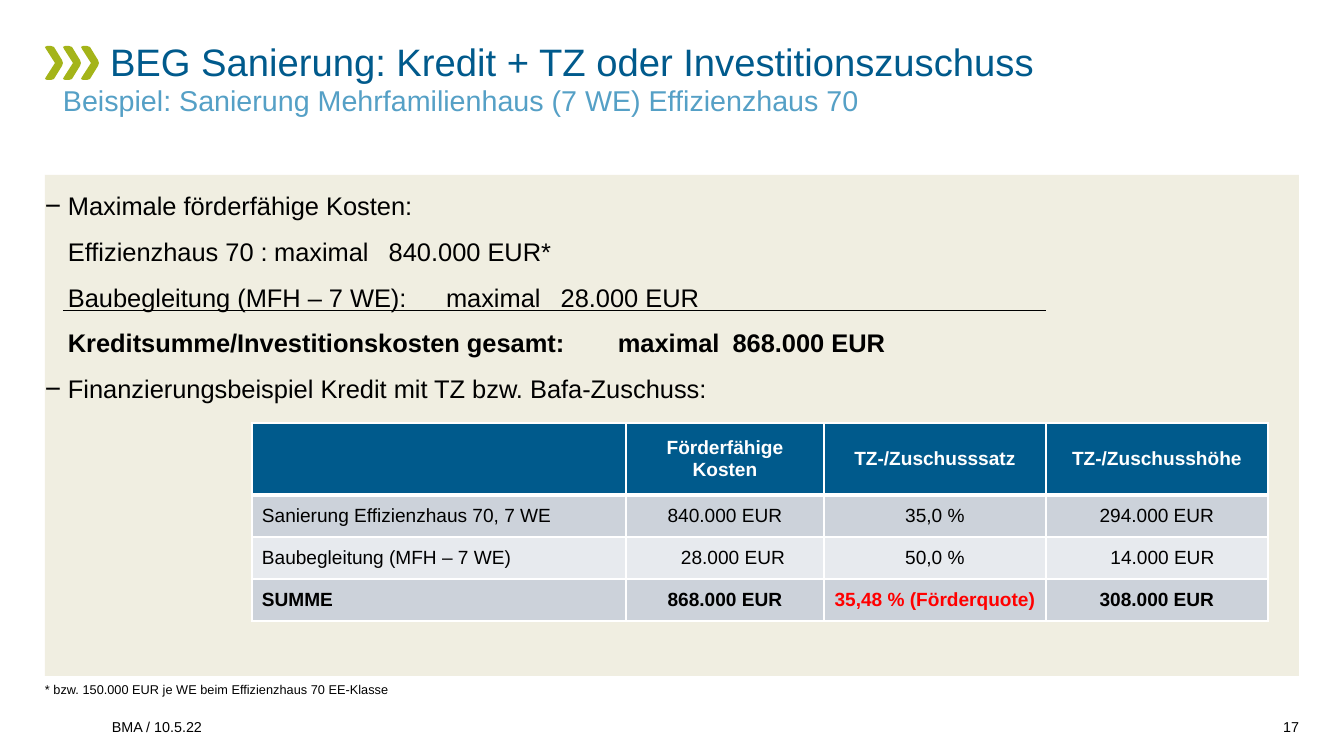
"""Build the slide on the BEG renovation loan and grant example."""
from lxml.etree import SubElement
from pptx import Presentation
from pptx.dml.color import RGBColor
from pptx.enum.shapes import MSO_CONNECTOR, MSO_SHAPE
from pptx.enum.text import MSO_ANCHOR, PP_ALIGN
from pptx.oxml.ns import qn
from pptx.util import Pt

SCALE = 7979
BLACK, WHITE, RED = "000000", "FFFFFF", "FF0000"
BLUE, LIGHT_BLUE, GREEN, BEIGE = "005A8C", "55A0C6", "A4B419", "F0EEE1"
BAND_DARK, BAND_LIGHT = "CCD2DA", "E7EAEE"


def color(hex_string):
    return RGBColor.from_string(hex_string)


def style(paragraph, size, hex_string, bold=False, align=PP_ALIGN.LEFT):
    paragraph.alignment = align
    paragraph.font.name = "Arial"
    paragraph.font.size = Pt(size)
    paragraph.font.bold = bold
    paragraph.font.color.rgb = color(hex_string)


presentation = Presentation()
presentation.slide_width = 1344 * SCALE
presentation.slide_height = 756 * SCALE
slide = presentation.slides.add_slide(presentation.slide_layouts[6])

chevron_points = [(2, 0), (6, 0), (9, 1), (17, 14), (18, 17), (17, 20), (9, 33), (6, 34),
                  (2, 34), (0, 33), (1, 31), (10, 17), (1, 3), (0, 1)]
for left in (45, 63, 81):
    points = [(left + x, 46 + y) for x, y in chevron_points]
    builder = slide.shapes.build_freeform(*points[0], scale=SCALE)
    builder.add_line_segments(points[1:], close=True)
    chevron = builder.convert_to_shape()
    chevron.shadow.inherit = False
    chevron.fill.solid()
    chevron.fill.fore_color.rgb = color(GREEN)
    chevron.line.fill.background()

panel = slide.shapes.add_shape(MSO_SHAPE.RECTANGLE, 45 * SCALE, 175 * SCALE, 1254 * SCALE, 501 * SCALE)
panel.shadow.inherit = False
panel.fill.solid()
panel.fill.fore_color.rgb = color(BEIGE)
panel.line.fill.background()
frame = panel.text_frame
frame.word_wrap = True
frame.vertical_anchor = MSO_ANCHOR.TOP
frame.margin_left = frame.margin_top = frame.margin_right = frame.margin_bottom = 0

panel_lines = [
    ("Maximale förderfähige Kosten:", False, 0),
    ("Effizienzhaus 70 :\tmaximal\t840.000 EUR*", False, 843),
    ("Baubegleitung (MFH – 7 WE):\tmaximal\t28.000 EUR", False, 833),
    ("Kreditsumme/Investitionskosten gesamt:\tmaximal\t868.000 EUR", True, 833),
    ("Finanzierungsbeispiel Kredit mit TZ bzw. Bafa-Zuschuss:", False, 0),
]
for index, (text, bold, amount_end) in enumerate(panel_lines):
    paragraph = frame.add_paragraph() if index else frame.paragraphs[0]
    paragraph.text = text
    paragraph.line_spacing = Pt(28.75)
    properties = paragraph._p.get_or_add_pPr()
    if amount_end:
        properties.set("marL", "0")
        properties.set("indent", str(23 * SCALE))
        SubElement(properties, qn("a:buNone"))
        tabs = SubElement(properties, qn("a:tabLst"))
        for position, side in ((573, "l"), (amount_end, "r")):
            SubElement(tabs, qn("a:tab"), pos=str(position * SCALE), algn=side)
    else:
        properties.set("marL", str(23 * SCALE))
        properties.set("indent", str(-23 * SCALE))
        SubElement(properties, qn("a:buSzPct"), val="110000")
        SubElement(properties, qn("a:buFont"), typeface="Arial")
        SubElement(properties, qn("a:buChar"), char="−")
    style(paragraph, 16, BLACK, bold)

text_boxes = [
    ("BEG Sanierung: Kredit + TZ oder Investitionszuschuss",
     63, 42, 1236, 47, 24, BLUE, MSO_ANCHOR.TOP, PP_ALIGN.LEFT, 0.95, 47),
    ("Beispiel: Sanierung Mehrfamilienhaus (7 WE) Effizienzhaus 70",
     63, 85, 1236, 41, 18, LIGHT_BLUE, MSO_ANCHOR.TOP, PP_ALIGN.LEFT, 0.95, 0),
    ("* bzw. 150.000 EUR je WE beim Effizienzhaus 70 EE-Klasse",
     45, 678, 1254, 19, 8, BLACK, MSO_ANCHOR.BOTTOM, PP_ALIGN.LEFT, 1.0, 0),
    ("BMA / 10.5.22", 112, 703, 1135, 32, 9, BLACK, MSO_ANCHOR.BOTTOM, PP_ALIGN.LEFT, 1.0, 0),
    ("17", 1252, 703, 47, 32, 9, BLACK, MSO_ANCHOR.BOTTOM, PP_ALIGN.RIGHT, 1.0, 0),
]
for text, left, top, width, height, size, ink, anchor, align, spacing, indent in text_boxes:
    box = slide.shapes.add_textbox(left * SCALE, top * SCALE, width * SCALE, height * SCALE)
    frame = box.text_frame
    frame.word_wrap = True
    frame.vertical_anchor = anchor
    frame.margin_left = frame.margin_top = frame.margin_right = frame.margin_bottom = 0
    paragraph = frame.paragraphs[0]
    paragraph.text = text
    paragraph.line_spacing = spacing
    paragraph._p.get_or_add_pPr().set("indent", str(indent * SCALE))
    style(paragraph, size, ink, align=align)

funding_rows = [
    ("", "Förderfähige Kosten", "TZ-/Zuschusssatz", "TZ-/Zuschusshöhe"),
    ("Sanierung Effizienzhaus 70, 7 WE", "840.000 EUR", "35,0 %", "294.000 EUR"),
    ("Baubegleitung (MFH – 7 WE)", "28.000 EUR", "50,0 %", "14.000 EUR"),
    ("SUMME", "868.000 EUR", "35,48 % (Förderquote)", "308.000 EUR"),
]
column_widths = (374, 198, 222, 222)
row_heights = (72, 42, 42, 42)
row_fills = (BLUE, BAND_DARK, BAND_LIGHT, BAND_DARK)
left_margins = {(2, 1): 26, (2, 3): 21}
table = slide.shapes.add_table(4, 4, 252 * SCALE, 423 * SCALE,
                               sum(column_widths) * SCALE, sum(row_heights) * SCALE).table
table.first_row = False
table.horz_banding = False
for column, width in zip(table.columns, column_widths):
    column.width = width * SCALE
for row_index, texts in enumerate(funding_rows):
    table.rows[row_index].height = row_heights[row_index] * SCALE
    for column_index, text in enumerate(texts):
        cell = table.cell(row_index, column_index)
        cell.vertical_anchor = MSO_ANCHOR.MIDDLE
        cell.margin_left = left_margins.get((row_index, column_index), 10) * SCALE
        cell.margin_right = 10 * SCALE
        cell.margin_top = cell.margin_bottom = 5 * SCALE
        properties = cell._tc.get_or_add_tcPr()
        for side in ("L", "R", "T", "B"):
            header_rule = (row_index, side) in ((0, "B"), (1, "T"))
            border = SubElement(properties, qn(f"a:ln{side}"), w=str(Pt(3 if header_rule else 1)))
            SubElement(SubElement(border, qn("a:solidFill")), qn("a:srgbClr"), val=WHITE)
        cell.fill.solid()
        cell.fill.fore_color.rgb = color(row_fills[row_index])
        paragraph = cell.text_frame.paragraphs[0]
        paragraph.text = text
        ink = WHITE if row_index == 0 else RED if "Förderquote" in text else BLACK
        align = PP_ALIGN.CENTER if column_index else PP_ALIGN.LEFT
        style(paragraph, 12, ink, row_index in (0, 3), align)

sum_line = slide.shapes.add_connector(MSO_CONNECTOR.STRAIGHT, 63 * SCALE, 310 * SCALE, 1046 * SCALE, 310 * SCALE)
sum_line.line.color.rgb = color(BLACK)
sum_line.line.width = Pt(0.5)
SubElement(sum_line._element.spPr, qn("a:effectLst"))

presentation.save("out.pptx")
